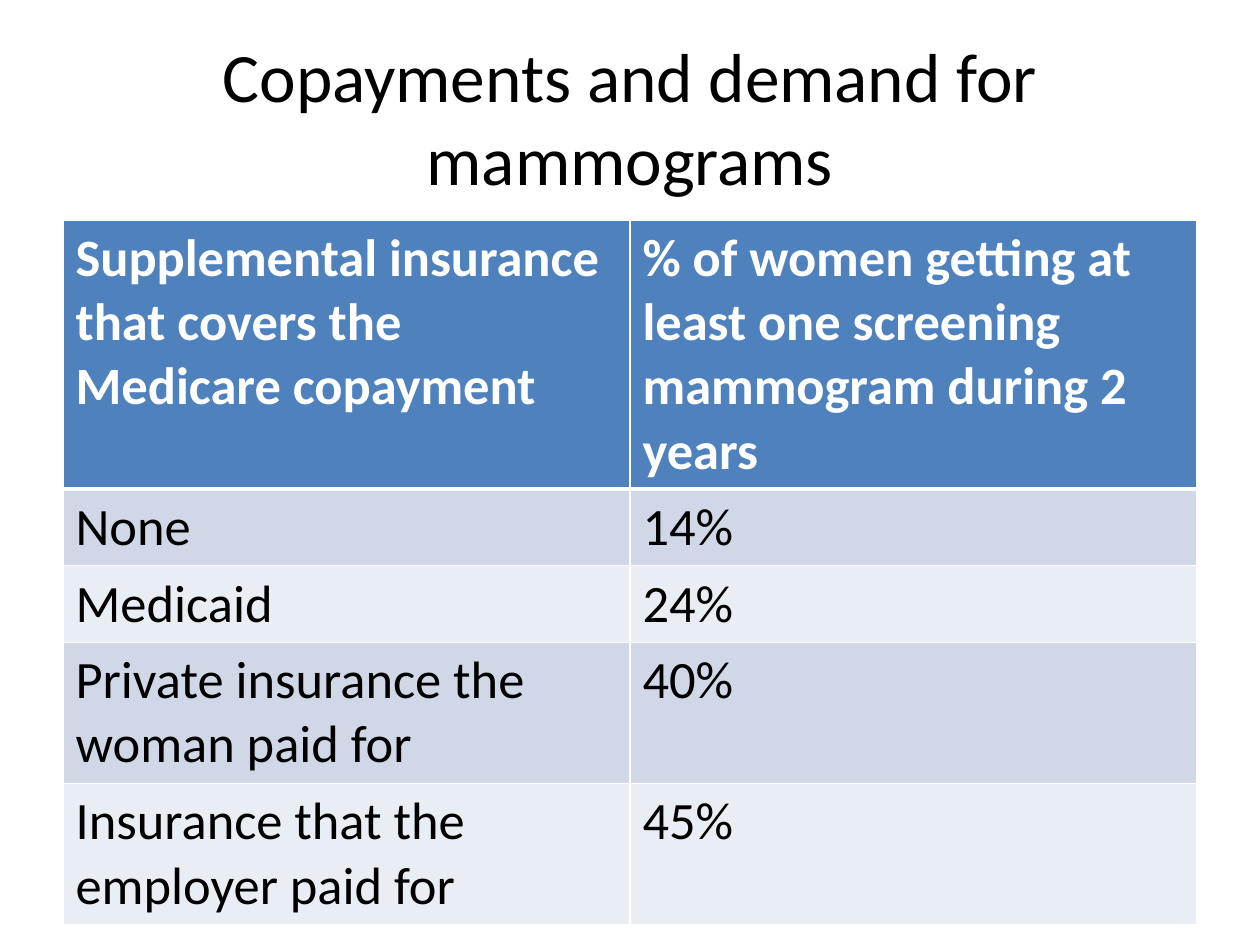
from lxml import etree
from pptx import Presentation
from pptx import util as u
from pptx.dml.color import RGBColor
from pptx.enum import text
from pptx.oxml import ns

WHITE, BLACK, BLUE = "FFFFFF", "000000", "4F81BD"
BANDS = ("D0D8E8", "E9EDF4")
TITLE = "Copayments and demand for mammograms"
ROWS = [
    (2.13, "Supplemental insurance that covers the Medicare copayment",
     "% of women getting at least one screening mammogram during 2 years"),
    (0.61, "None", "14%"),
    (0.61, "Medicaid", "24%"),
    (1.12, "Private insurance the woman paid for", "40%"),
    (1.12, "Insurance that the employer paid for", "45%"),
]


def rgb(value):
    return RGBColor.from_string(value)


def write(tf, content, color, **formats):
    p = tf.paragraphs[0]
    r = p.add_run()
    r.text = content
    r.font.color.rgb = rgb(color)
    for name, value in {"name": "Calibri", **formats}.items():
        setattr(r.font, name, value)
    return p


def add_border(cell, side, width):
    ln = etree.SubElement(cell._tc.get_or_add_tcPr(), ns.qn(f"a:ln{side}"),
                          w=str(u.Pt(width)))
    fill = etree.SubElement(ln, ns.qn("a:solidFill"))
    etree.SubElement(fill, ns.qn("a:srgbClr"), val=WHITE)


def add_title(slide, left, top, width, height):
    tf = slide.shapes.add_textbox(left, top, width, height).text_frame
    for name, value in {"word_wrap": True, "vertical_anchor": text.MSO_ANCHOR.MIDDLE}.items():
        setattr(tf, name, value)
    p = write(tf, TITLE, BLACK, size=u.Pt(39.6))
    p.alignment = text.PP_ALIGN.CENTER


def add_copayment_table(slide, left, top, width):
    height = u.Inches(sum(row[0] for row in ROWS))
    table = slide.shapes.add_table(len(ROWS), 2, left, top, width, height).table
    for i, (row_height, *contents) in enumerate(ROWS):
        table.rows[i].height = u.Inches(row_height)
        header = i == 0
        for j, content in enumerate(contents):
            cell = table.cell(i, j)
            for side in "LRTB":
                thick = (header and side == "B") or (i == 1 and side == "T")
                add_border(cell, side, 3 if thick else 1)
            cell.fill.solid()
            cell.fill.fore_color.rgb = rgb(BLUE if header else BANDS[(i - 1) % 2])
            write(cell.text_frame, content, WHITE if header else BLACK,
                  size=u.Pt(30), bold=header)


def main():
    prs = Presentation()
    prs.slide_width, prs.slide_height = u.Inches(10), u.Inches(7.5)
    slide = prs.slides.add_slide(prs.slide_layouts[6])
    left, width = u.Inches(0.5), u.Inches(9)
    add_title(slide, left, u.Inches(0.3), width, u.Inches(1.25))
    add_copayment_table(slide, left, u.Inches(1.75), width)
    prs.save("out.pptx")


if __name__ == "__main__":
    main()
